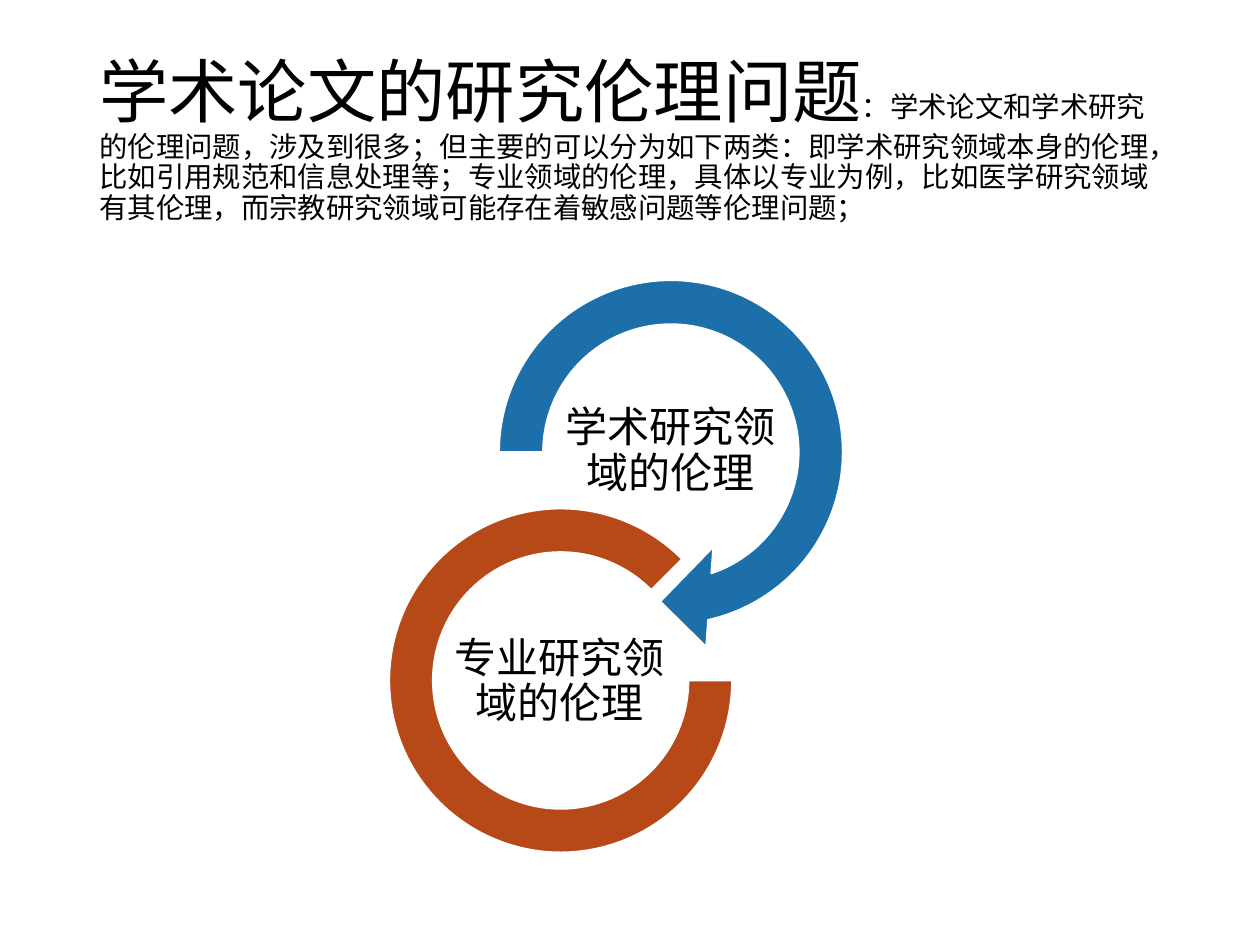
from collections import namedtuple
from dataclasses import dataclass

from pptx import Presentation
from pptx import util as u
from pptx.dml.color import RGBColor
from pptx.enum import shapes, text

Box = namedtuple("Box", "left top width height")


@dataclass(frozen=True)
class Theme:
    font: str = "Times New Roman"
    ink: str = "000000"
    outline: str = "FFFFFF"
    academic: str = "1D6FA9"
    specialist: str = "B74919"
    heading: float = 39.6
    summary: float = 16.2
    label: float = 24
    line_spacing: float = 0.9


THEME = Theme()
SLIDE = Box(0, 0, u.Inches(10), u.Inches(7.5))

HEADING = "学术论文的研究伦理问题"
SUMMARY = (
    "：学术论文和学术研究的伦理问题，涉及到很多；但主要的可以分为如下两类："
    "即学术研究领域本身的伦理，比如引用规范和信息处理等；"
    "专业领域的伦理，具体以专业为例，比如医学研究领域有其伦理，"
    "而宗教研究领域可能存在着敏感问题等伦理问题；"
)


def inside(box, left, top, width, height):
    """Return the part of a box given by shares of its width and height."""
    return Box(
        int(box.left + left * box.width),
        int(box.top + top * box.height),
        int(width * box.width),
        int(height * box.height),
    )


def apply(target, formats):
    for attribute, value in formats.items():
        setattr(target, attribute, value)


def add_words(slide, box, phrases, align, inset=None):
    """Place one paragraph made of (wording, size) phrases."""
    frame = slide.shapes.add_textbox(*box).text_frame
    apply(frame, {"word_wrap": True, "vertical_anchor": text.MSO_ANCHOR.MIDDLE})
    if inset is not None:
        sides = ("left", "top", "right", "bottom")
        apply(frame, {f"margin_{side}": inset for side in sides})
    paragraph = frame.paragraphs[0]
    apply(paragraph, {"alignment": align, "line_spacing": THEME.line_spacing})
    for wording, size in phrases:
        phrase = paragraph.add_run()
        phrase.text = wording
        apply(phrase.font, {"name": THEME.font, "size": u.Pt(size)})
        phrase.font.color.rgb = RGBColor.from_string(THEME.ink)


def add_title(slide, box):
    phrases = [(HEADING, THEME.heading), (SUMMARY, THEME.summary)]
    add_words(slide, box, phrases, text.PP_ALIGN.LEFT)


def add_ring(slide, box, preset, adjustments, color):
    ring = slide.shapes.add_shape(preset, *box)
    ring.shadow.inherit = False
    for index, value in enumerate(adjustments):
        ring.adjustments[index] = value
    ring.fill.solid()
    ring.fill.fore_color.rgb = RGBColor.from_string(color)
    ring.line.color.rgb = RGBColor.from_string(THEME.outline)
    ring.line.width = u.Pt(1)


def add_ethics_cycle(slide, box):
    """Two linked rings, each around the name of a field of ethics."""
    preset = shapes.MSO_SHAPE
    fields = [
        # wording, ring share, label corner, preset, adjustments, colour
        ("学术研究领域的伦理", (0.17, 0, 0.83, 0.666), (0.353, 0.24),
         preset.CIRCULAR_ARROW, (0.11, 11.423, 45, 108, 0.125), THEME.academic),
        ("专业研究领域的伦理", (0, 0.427, 0.712, 0.573), (0.123, 0.624),
         preset.BLOCK_ARC, (0, 189, 0.127), THEME.specialist),
    ]
    for wording, ring, corner, kind, adjustments, color in fields:
        add_ring(slide, inside(box, *ring), kind, adjustments, color)
        add_words(slide, inside(box, *corner, 0.463, 0.185),
                  [(wording, THEME.label)], text.PP_ALIGN.CENTER, u.Inches(0.02))


def main():
    deck = Presentation()
    apply(deck, {"slide_width": SLIDE.width, "slide_height": SLIDE.height})
    slide = deck.slides.add_slide(deck.slide_layouts[6])
    # Heading with its summary
    add_title(slide, inside(SLIDE, 0.069, 0.053, 0.862, 0.193))
    # The two kinds of ethics
    add_ethics_cycle(slide, inside(SLIDE, 0.309, 0.267, 0.382, 0.635))
    deck.save("out.pptx")


if __name__ == "__main__":
    main()
